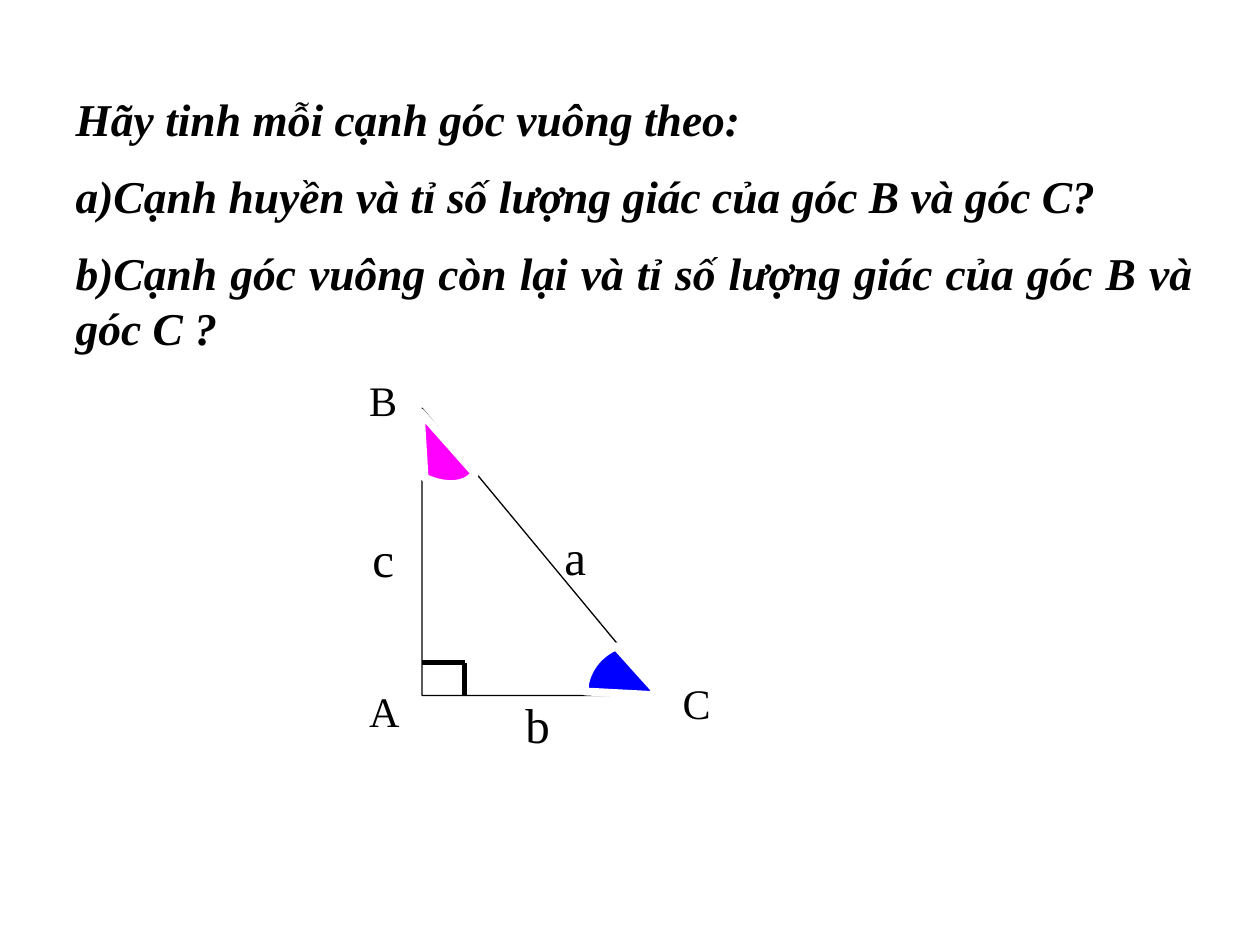
"""Build a geometry question slide with a labelled right triangle."""
from lxml.etree import SubElement
from pptx import Presentation
from pptx.dml.color import RGBColor
from pptx.enum.shapes import MSO_CONNECTOR as Connector, MSO_SHAPE as Shape
from pptx.enum.text import MSO_ANCHOR as Anchor, MSO_AUTO_SIZE as AutoSize, PP_ALIGN as Align
from pptx.oxml.ns import qn
from pptx.util import Cm, Pt

BLACK = RGBColor(0x00, 0x00, 0x00)
WHITE = RGBColor(0xFF, 0xFF, 0xFF)
BLUE = RGBColor(0x00, 0x00, 0xFF)
MAGENTA = RGBColor(0xFF, 0x00, 0xFF)
FONT = "Times New Roman"
LEFT, TOP, RIGHT, BOTTOM = 8.51, 8.23, 13.31, 14.02
CORNER_X, CORNER_Y = 9.37, 13.36
QUESTION = (
    "Hãy tinh mỗi cạnh góc vuông theo:",
    "a)Cạnh huyền và tỉ số lượng giác của góc B và góc C?",
    "b)Cạnh góc vuông còn lại và tỉ số lượng giác của góc B và góc C ?",
)
VERTICES = (("A", 7.19, 13.69), ("B", 7.19, 7.42), ("C", 13.51, 13.54))
SIDES = (("c", 7.26, 10.52), ("b", 10.34, 13.87), ("a", 11.13, 10.49))


def write(para, text, size, bold=False, italic=False, align=Align.LEFT, before=0):
    """Put formatted text into a paragraph."""
    para.alignment = align
    para.space_before = Pt(before)
    para.line_spacing = 1.0
    span = para.add_run()
    span.text = text
    font = span.font
    font.name, font.size = FONT, Pt(size)
    font.bold, font.italic = bold, italic
    font.color.rgb = BLACK


def add_question(page):
    """Fill the body placeholder with the unbulleted question."""
    title = page.shapes.title
    title.element.getparent().remove(title.element)
    box = page.placeholders[1]
    box.left, box.top, box.width, box.height = Cm(1.27), Cm(1.7), Cm(23.06), Cm(9.14)
    frame = box.text_frame
    frame.auto_size = AutoSize.NONE
    frame.vertical_anchor = Anchor.TOP
    for index, text in enumerate(QUESTION):
        para = frame.add_paragraph() if index else frame.paragraphs[0]
        write(para, text, 26, bold=True, italic=True, align=Align.JUSTIFY,
              before=13 if index else 0)
        properties = para._p.get_or_add_pPr()
        properties.set("marL", "0")
        properties.set("indent", "0")
        SubElement(properties, qn("a:buNone"))


def paint(shape, fill, line, width):
    """Set fill and outline and drop the shadow."""
    shape.shadow.inherit = False
    shape.fill.solid()
    shape.fill.fore_color.rgb = fill
    shape.line.color.rgb = line
    shape.line.width = Pt(width)


def add_label(figure, text, left, top, size):
    """Add a one-letter label."""
    height = 1.27 if size < 28 else 1.45
    box = figure.shapes.add_textbox(Cm(left), Cm(top), Cm(1.3), Cm(height))
    box.text_frame.word_wrap = True
    write(box.text_frame.paragraphs[0], text, size)


def add_line(figure, x1, y1, x2, y2):
    """Add one stroke of the right-angle mark."""
    line = figure.shapes.add_connector(Connector.STRAIGHT, Cm(x1), Cm(y1), Cm(x2), Cm(y2))
    line.line.color.rgb = BLACK
    line.line.width = Pt(3)
    SubElement(line._element.spPr, qn("a:effectLst"))


def curve(points, steps=12):
    """Return points along a cubic Bezier curve."""
    weights = (1, 3, 3, 1)
    return [
        tuple(
            sum(w * (1 - t) ** (3 - i) * t ** i * point[axis]
                for i, (w, point) in enumerate(zip(weights, points)))
            for axis in (0, 1)
        )
        for t in (step / steps for step in range(steps + 1))
    ]


def add_wedge(figure, vertex, start, arc, color):
    """Add an angle wedge bounded by a curved edge."""
    outline = [start, *curve(arc), vertex]
    points = [(Cm(x), Cm(y)) for x, y in outline]
    builder = figure.shapes.build_freeform(*points[0])
    builder.add_line_segments(points[1:], close=True)
    paint(builder.convert_to_shape(), color, WHITE, 4.5)


def add_triangle(page):
    """Draw the right triangle with its labels and angles."""
    figure = page.shapes.add_group_shape()
    triangle = figure.shapes.add_shape(
        Shape.RIGHT_TRIANGLE, Cm(LEFT), Cm(TOP), Cm(RIGHT - LEFT), Cm(BOTTOM - TOP))
    paint(triangle, WHITE, BLACK, 0.75)
    for name, left, top in VERTICES:
        add_label(figure, name, left, top, 24)
    add_wedge(figure, (RIGHT, BOTTOM), (11.79, 13.94),
              ((11.79, 13.82), (11.84, 13.49), (12.07, 13.18), (12.42, 13.03)), BLUE)
    add_line(figure, LEFT, CORNER_Y, CORNER_X, CORNER_Y)
    add_line(figure, CORNER_X, CORNER_Y, CORNER_X, BOTTOM)
    for name, left, top in SIDES:
        add_label(figure, name, left, top, 28)
    add_wedge(figure, (8.48, 8.31), (9.58, 9.55),
              ((9.47, 9.65), (9.27, 9.8), (8.92, 9.8), (8.56, 9.63)), MAGENTA)


def main():
    """Build and save the deck."""
    deck = Presentation()
    deck.slide_width, deck.slide_height = Cm(25.4), Cm(19.05)
    page = deck.slides.add_slide(deck.slide_layouts[1])
    add_question(page)
    add_triangle(page)
    deck.save("out.pptx")


if __name__ == "__main__":
    main()
